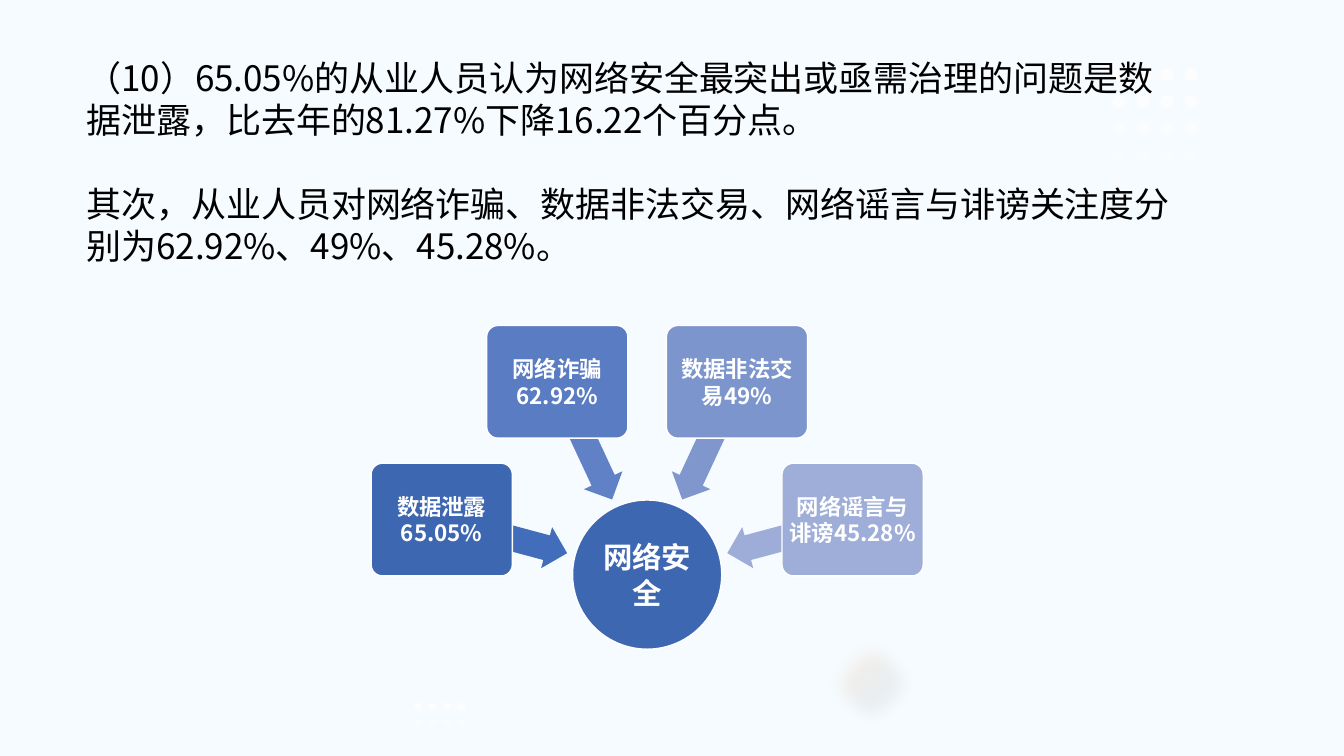
from dataclasses import dataclass
from itertools import product
from math import cos, pi, radians, sin

from lxml import etree
from pptx import Presentation
from pptx.dml.color import RGBColor
from pptx.enum.shapes import MSO_SHAPE
from pptx.enum.text import MSO_ANCHOR, PP_ALIGN
from pptx.oxml import parse_xml
from pptx.oxml.ns import nsdecls, qn
from pptx.util import Cm, Pt

OVAL = MSO_SHAPE.OVAL
ARROW = MSO_SHAPE.LEFT_ARROW
ROUNDED = MSO_SHAPE.ROUNDED_RECTANGLE
MIDDLE, TOP = MSO_ANCHOR.MIDDLE, MSO_ANCHOR.TOP
CENTER, LEFT = PP_ALIGN.CENTER, PP_ALIGN.LEFT

FONT = "Noto Sans CJK SC"
COLORS = {
    "page": "F6FBFF",
    "white": "FFFFFF",
    "black": "000000",
    "hub": "3E67B2",
    "leak": "3E67B2",
    "leak_arrow": "416DBB",
    "fraud": "5A7CC3",
    "fraud_arrow": "6081C5",
    "trade": "7D95CD",
    "trade_arrow": "8097CE",
    "rumor": "9FAED8",
    "rumor_arrow": "9EADD8",
    "glow_core": "4B6C9A",
    "glow_edge": "EACAA3",
}
HUB_X, HUB_Y = 16.31, 14.48
BOX_RADIUS, ARROW_RADIUS = 5.36, 3.73
FIRST_ANGLE, ANGLE_STEP = 195, 50
LINEAR = '<a:lin ang="5400000" scaled="0"/>'
RADIAL = ('<a:path path="circle"><a:fillToRect l="100000" t="100000"/></a:path>')


@dataclass(frozen=True)
class Issue:
    text: str
    color: str


@dataclass(frozen=True)
class DotGrid:
    left: float
    top: float
    columns: int
    rows: int
    step_x: float
    step_y: float
    diameter: float


@dataclass(frozen=True)
class Stop:
    position: int
    color: str
    opacity: int


ISSUES = [
    Issue("数据泄露65.05%", "leak"),
    Issue("网络诈骗62.92%", "fraud"),
    Issue("数据非法交易49%", "trade"),
    Issue("网络谣言与诽谤45.28%", "rumor"),
]
GRIDS = [
    DotGrid(28.04, 1.73, 4, 6, 0.6, 0.67, 0.32),
    DotGrid(10.44, 17.7, 4, 3, 0.36, 0.4, 0.19),
]
FINDINGS = [
    "（10）65.05%的从业人员认为网络安全最突出或亟需治理的问题是数据泄露，比去年的81.27%下降16.22个百分点。",
    "其次，从业人员对网络诈骗、数据非法交易、网络谣言与诽谤关注度分别为62.92%、49%、45.28%。",
]


def color_of(name: str) -> RGBColor:
    return RGBColor.from_string(COLORS[name])


def fill_gradient(shape, stops: list[Stop], direction: str) -> None:
    shape.fill.background()
    shape.line.fill.background()
    shape.shadow.inherit = False
    marks = "".join(
        f'<a:gs pos="{stop.position * 1000}"><a:srgbClr val="{COLORS[stop.color]}">'
        f'<a:alpha val="{stop.opacity * 1000}"/></a:srgbClr></a:gs>'
        for stop in stops
    )
    gradient = parse_xml(
        f'<a:gradFill {nsdecls("a")} rotWithShape="1">'
        f"<a:gsLst>{marks}</a:gsLst>{direction}</a:gradFill>"
    )
    properties = shape._element.spPr
    properties.replace(properties.find(qn("a:noFill")), gradient)


def add_glow(page) -> None:
    glow = page.shapes.add_shape(OVAL, Cm(20.73), Cm(15.98), Cm(2.51), Cm(2.51))
    fill_gradient(glow, [Stop(0, "glow_core", 0), Stop(70, "glow_edge", 25)], RADIAL)
    effects = glow._element.spPr.find(qn("a:effectLst"))
    etree.SubElement(effects, qn("a:softEdge"), rad=str(Cm(0.4)))


def add_dots(page, grid: DotGrid, sides: int = 16) -> None:
    radius = grid.diameter / 2
    builder = None
    for row, column in product(range(grid.rows), range(grid.columns)):
        center_x = grid.left + radius + column * grid.step_x
        center_y = grid.top + radius + row * grid.step_y
        points = [
            (
                Cm(center_x + radius * cos(2 * pi * side / sides)),
                Cm(center_y + radius * sin(2 * pi * side / sides)),
            )
            for side in range(sides)
        ]
        if builder is None:
            builder = page.shapes.build_freeform(*points[0])
        else:
            builder.move_to(*points[0])
        builder.add_line_segments(points[1:], close=True)
    dots = builder.convert_to_shape()
    fill_gradient(dots, [Stop(0, "white", 100), Stop(100, "white", 0)], LINEAR)


def add_centered(page, kind, center_x: float, center_y: float, width: float,
                 height: float, color: str, outlined: bool = True):
    shape = page.shapes.add_shape(
        kind, Cm(center_x - width / 2), Cm(center_y - height / 2), Cm(width), Cm(height)
    )
    shape.shadow.inherit = False
    shape.fill.solid()
    shape.fill.fore_color.rgb = color_of(color)
    if outlined:
        shape.line.color.rgb = color_of("white")
        shape.line.width = Pt(1)
    else:
        shape.line.fill.background()
    return shape


def write_text(box, paragraphs: list[str], *, size: int, color: str = "white",
               bold: bool = True, align=CENTER, anchor=MIDDLE,
               inset: tuple[float, float] = (0.08, 0.08), gap: int = 0) -> None:
    frame = box.text_frame
    frame.word_wrap = True
    frame.vertical_anchor = anchor
    frame.margin_left = frame.margin_right = Cm(inset[0])
    frame.margin_top = frame.margin_bottom = Cm(inset[1])
    for index, text in enumerate(paragraphs):
        para = frame.add_paragraph() if index else frame.paragraphs[0]
        para.alignment = align
        para.line_spacing = Pt(size * 1.2)
        para.space_before = Pt(gap if index else 0)
        span = para.add_run()
        span.text = text
        span.font.name = FONT
        span.font.size = Pt(size)
        span.font.bold = bold
        span.font.color.rgb = color_of(color)
        latin = span._r.rPr.find(qn("a:latin"))
        latin.addnext(latin.makeelement(qn("a:ea"), {"typeface": FONT}))


def add_issue(page, issue: Issue, angle: float) -> None:
    across, down = cos(radians(angle)), sin(radians(angle))
    arrow = add_centered(page, ARROW, HUB_X + ARROW_RADIUS * across,
                         HUB_Y + ARROW_RADIUS * down, 3.28, 1.07,
                         f"{issue.color}_arrow", outlined=False)
    arrow.adjustments[0] = 0.6
    arrow.adjustments[1] = 0.5
    arrow.rotation = angle
    box = add_centered(page, ROUNDED, HUB_X + BOX_RADIUS * across,
                       HUB_Y + BOX_RADIUS * down, 3.56, 2.84, issue.color)
    box.adjustments[0] = 0.1
    write_text(box, [issue.text], size=16)


def main() -> None:
    deck = Presentation()
    deck.slide_width, deck.slide_height = Cm(33.87), Cm(19.05)
    page = deck.slides.add_slide(deck.slide_layouts[6])
    page.background.fill.solid()
    page.background.fill.fore_color.rgb = color_of("page")
    add_glow(page)
    for grid in GRIDS:
        add_dots(page, grid)
    findings = page.shapes.add_textbox(Cm(1.93), Cm(1.3), Cm(28.24), Cm(5.59))
    write_text(findings, FINDINGS, size=25, color="black", bold=False, align=LEFT,
               anchor=TOP, inset=(0.25, 0.13), gap=30)
    hub = add_centered(page, OVAL, HUB_X, HUB_Y, 3.76, 3.76, "hub")
    write_text(hub, ["网络安全"], size=21, inset=(0.03, 0.03))
    for index, issue in enumerate(ISSUES):
        add_issue(page, issue, FIRST_ANGLE + index * ANGLE_STEP)
    deck.save("out.pptx")


if __name__ == "__main__":
    main()
